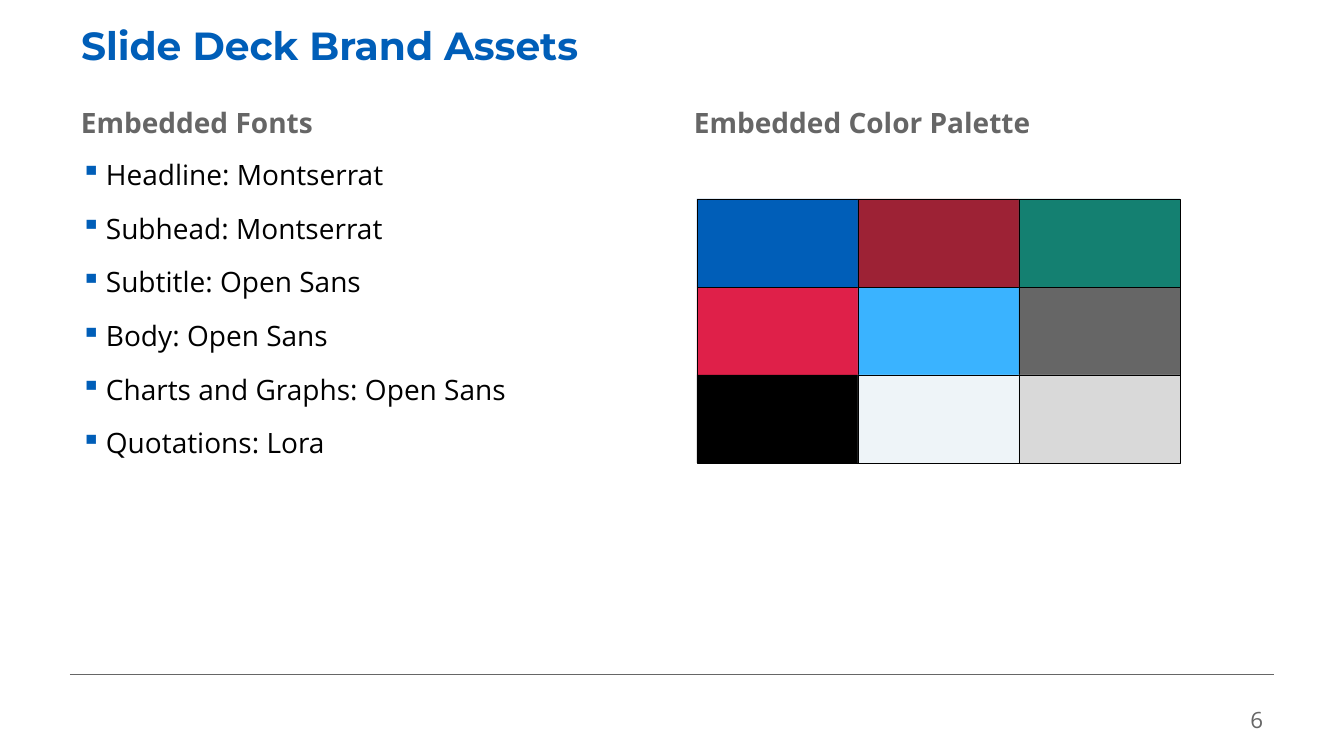
from lxml import etree
from pptx import Presentation, util as u
from pptx.dml.color import RGBColor
from pptx.enum import shapes, text
from pptx.oxml import ns

PX = u.Inches(1) / 100.8  # EMU in one px

BLUE = RGBColor(0x00, 0x5E, 0xB8)
WINE = RGBColor(0x9D, 0x22, 0x35)
TEAL = RGBColor(0x14, 0x80, 0x71)
RED = RGBColor(0xDF, 0x20, 0x49)
SKY = RGBColor(0x3A, 0xB3, 0xFF)
GRAY = RGBColor(0x66, 0x66, 0x66)
BLACK = RGBColor(0x00, 0x00, 0x00)
PALE = RGBColor(0xEE, 0xF4, 0xF8)
SILVER = RGBColor(0xD9, 0xD9, 0xD9)

PALETTE = [[BLUE, WINE, TEAL], [RED, SKY, GRAY], [BLACK, PALE, SILVER]]
FONTS = ["Headline: Montserrat", "Subhead: Montserrat", "Subtitle: Open Sans",
         "Body: Open Sans", "Charts and Graphs: Open Sans", "Quotations: Lora"]


def px(*vals):
    return [u.Emu(round(v * PX)) for v in vals]


def add_bullet(par, color):
    props = par._p.get_or_add_pPr()
    indent = px(25)[0]
    props.set("marL", str(indent))
    props.set("indent", str(-indent))
    tint = etree.SubElement(props, ns.qn("a:buClr"))
    etree.SubElement(tint, ns.qn("a:srgbClr"), val=str(color))
    etree.SubElement(props, ns.qn("a:buChar"), char="▪")


def set_text(box, lines, size=20, color=BLACK, font="Open Sans", bold=False,
             align=text.PP_ALIGN.LEFT, anchor=text.MSO_ANCHOR.MIDDLE,
             spacing=1.0, after=0, bullet=None):
    frame = box.text_frame
    frame.word_wrap = True
    frame.auto_size = text.MSO_AUTO_SIZE.NONE
    frame.vertical_anchor = anchor
    frame.text = "\n".join(lines)
    for par in frame.paragraphs:
        par.line_spacing = spacing
        par.space_after = u.Pt(after)
        par.alignment = align
        if bullet is not None:
            add_bullet(par, bullet)
        face = par.runs[0].font
        face.name, face.size, face.bold = font, u.Pt(size), bold
        face.color.rgb = color


def add_text(slide, lines, left, top, width, height, **form):
    box = slide.shapes.add_textbox(*px(left, top, width, height))
    set_text(box, lines, **form)


def add_title(slide, words):
    title = slide.shapes.title
    title.left, title.top, title.width, title.height = px(71, 6, 1203, 84)
    set_text(title, [words], size=28, color=BLUE, font="Montserrat",
             bold=True, spacing=0.9)


def add_head(slide, words, left, width):
    add_text(slide, [words], left, 95, width, 49, color=GRAY, bold=True,
             anchor=text.MSO_ANCHOR.BOTTOM, spacing=1.1, after=12)


def add_swatch(slide, color, left, top, width, height):
    tile = slide.shapes.add_shape(shapes.MSO_SHAPE.RECTANGLE,
                                  *px(left, top, width, height))
    tile.shadow.inherit = False
    tile.fill.solid()
    tile.fill.fore_color.rgb = color
    tile.line.color.rgb = BLACK
    tile.line.width = u.Pt(0.5)


def add_grid(slide, left, top, width, height):
    for row, colors in enumerate(PALETTE):
        for col, color in enumerate(colors):
            add_swatch(slide, color, left + col * width, top + row * height,
                       width, height)


def add_rule(slide, left, right, top):
    rule = slide.shapes.add_connector(shapes.MSO_CONNECTOR.STRAIGHT,
                                      *px(left, top, right, top))
    rule.line.color.rgb = GRAY
    rule.line.width = u.Pt(0.5)
    etree.SubElement(rule._element.spPr, ns.qn("a:effectLst"))


def main():
    deck = Presentation()
    deck.slide_width, deck.slide_height = px(1344, 756)
    slide = deck.slides.add_slide(deck.slide_layouts[5])

    # Footer
    add_rule(slide, 70, 1274, 674)
    add_text(slide, ["6"], 1172, 706, 101, 28, size=16, color=GRAY,
             align=text.PP_ALIGN.RIGHT)

    # Title
    add_title(slide, "Slide Deck Brand Assets")

    # Font list
    add_head(slide, "Embedded Fonts", 71, 602)
    add_text(slide, FONTS, 71, 149, 602, 518, spacing=1.1, after=12,
             anchor=text.MSO_ANCHOR.TOP, bullet=BLUE)

    # Color palette
    add_head(slide, "Embedded Color Palette", 684, 590)
    add_grid(slide, 697, 199, 161, 88)

    deck.save("out.pptx")


if __name__ == "__main__":
    main()
